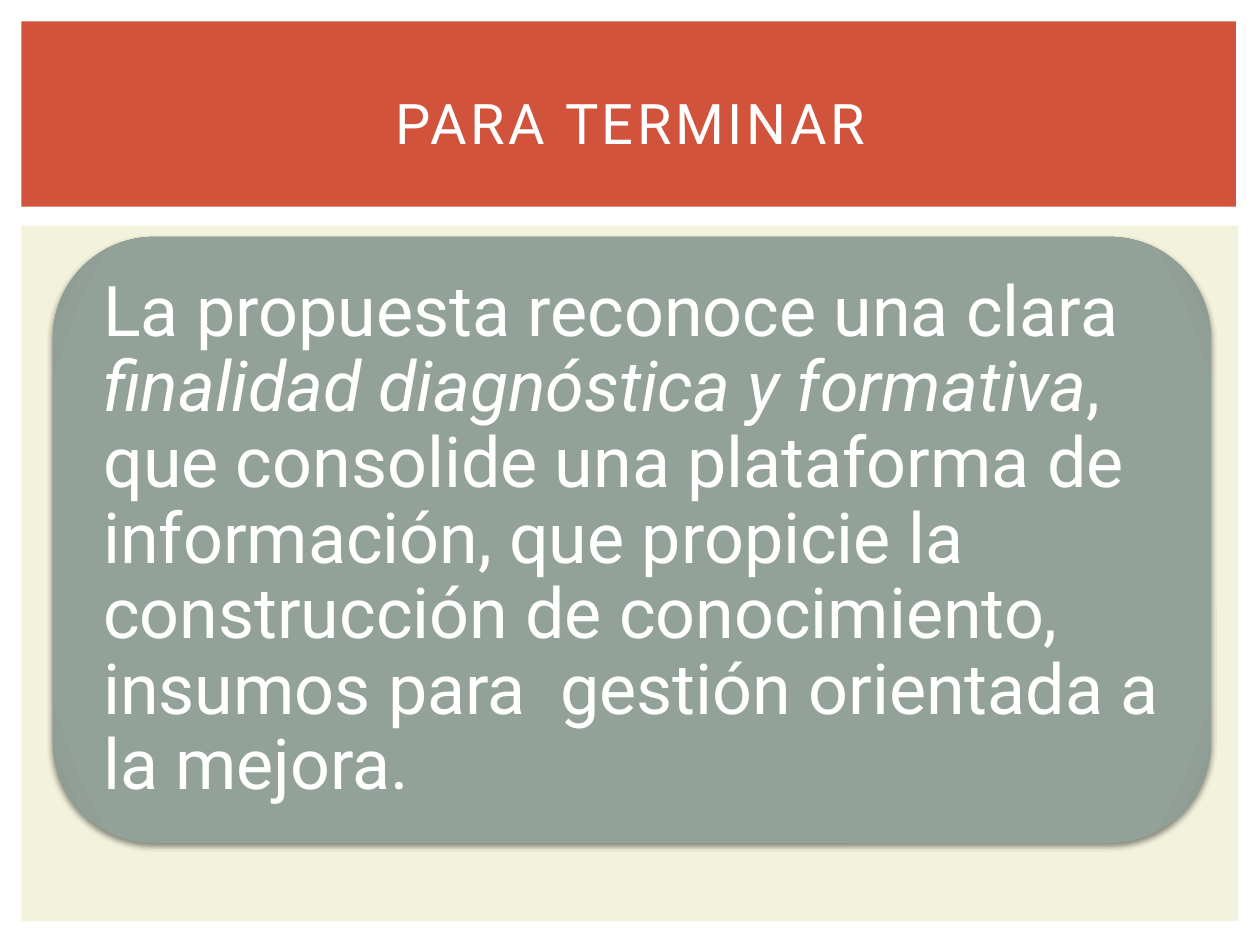
from lxml import etree
from pptx import Presentation
from pptx.dml.color import RGBColor
from pptx.enum import shapes, text
from pptx.util import Inches, Pt

FONT = "Roboto"
WHITE, CREAM, RED, SAGE, SAGE_DARK = "FFFFFF", "F3F2DC", "D2533C", "93A299", "89978F"
DRAWING_NS = "http://schemas.openxmlformats.org/drawingml/2006/main"

TITLE = "PARA TERMINAR"
MESSAGE = [  # (words, italic)
    ("La propuesta reconoce una clara ", False),
    ("finalidad diagnóstica y formativa", True),
    (", que consolide una plataforma de información, que propicie la construcción "
     "de conocimiento, insumos para  gestión orientada a la mejora.", False),
]

CARD_GRADIENT = f"""<a:gradFill xmlns:a="{DRAWING_NS}" rotWithShape="1"><a:gsLst>
<a:gs pos="0"><a:srgbClr val="{SAGE}"/></a:gs>
<a:gs pos="90000"><a:srgbClr val="{SAGE}"/></a:gs>
<a:gs pos="100000"><a:srgbClr val="{SAGE_DARK}"/></a:gs></a:gsLst>
<a:path path="circle"><a:fillToRect l="100000" t="100000" r="100000" b="100000"/></a:path>
</a:gradFill>"""
CARD_SHADOW = f"""<a:outerShdw xmlns:a="{DRAWING_NS}" blurRad="{Pt(3)}" dist="{Pt(2)}"
dir="5400000" rotWithShape="0"><a:srgbClr val="000000"><a:alpha val="45000"/></a:srgbClr>
</a:outerShdw>"""


def color(value):
    return RGBColor.from_string(value)


def add_panel(slide, kind, place, fill):
    panel = slide.shapes.add_shape(kind, *map(Inches, place))
    panel.shadow.inherit = False
    panel.fill.solid()
    panel.fill.fore_color.rgb = color(fill)
    panel.line.fill.background()
    return panel


def add_text(slide, place, spans, size, align, inset):
    box = slide.shapes.add_textbox(*map(Inches, place))
    frame = box.text_frame
    frame.word_wrap = True
    frame.vertical_anchor = text.MSO_ANCHOR.MIDDLE
    frame.margin_left = frame.margin_right = Inches(inset)
    frame.margin_top = frame.margin_bottom = Inches(inset)
    para = frame.paragraphs[0]
    para.alignment = align
    para.font.name = FONT
    para.font.size = Pt(size)
    para.font.color.rgb = color(WHITE)
    for words, italic in spans:
        span = para.add_run()
        span.text = words
        if italic:
            span.font.italic = True
    return para


def style_card(card):
    """Give the card its edge shading and soft shadow."""
    properties = card.element.spPr
    solid = properties.find(f"{{{DRAWING_NS}}}solidFill")
    properties.replace(solid, etree.fromstring(CARD_GRADIENT))
    effects = properties.find(f"{{{DRAWING_NS}}}effectLst")
    effects.append(etree.fromstring(CARD_SHADOW))


def main():
    deck = Presentation()
    deck.slide_width, deck.slide_height = Inches(10), Inches(7.5)
    slide = deck.slides.add_slide(deck.slide_layouts[6])

    rectangle = shapes.MSO_SHAPE.RECTANGLE
    add_panel(slide, rectangle, (0.17, 1.79, 9.66, 5.52), CREAM)
    add_panel(slide, rectangle, (0.17, 0.17, 9.64, 1.47), RED)
    card = add_panel(slide, shapes.MSO_SHAPE.ROUNDED_RECTANGLE, (0.42, 1.88, 9.19, 4.81), SAGE)
    style_card(card)

    message = add_text(slide, (0.65, 2.12, 8.73, 4.34), MESSAGE, 40, text.PP_ALIGN.LEFT, 0.17)
    message.line_spacing = 0.9
    title = add_text(slide, (0.42, 0.39, 9.17, 1.15), [(TITLE, False)], 32,
                     text.PP_ALIGN.CENTER, 0.05)
    title.runs[0].font._element.set("spc", "200")

    deck.save("out.pptx")


if __name__ == "__main__":
    main()
